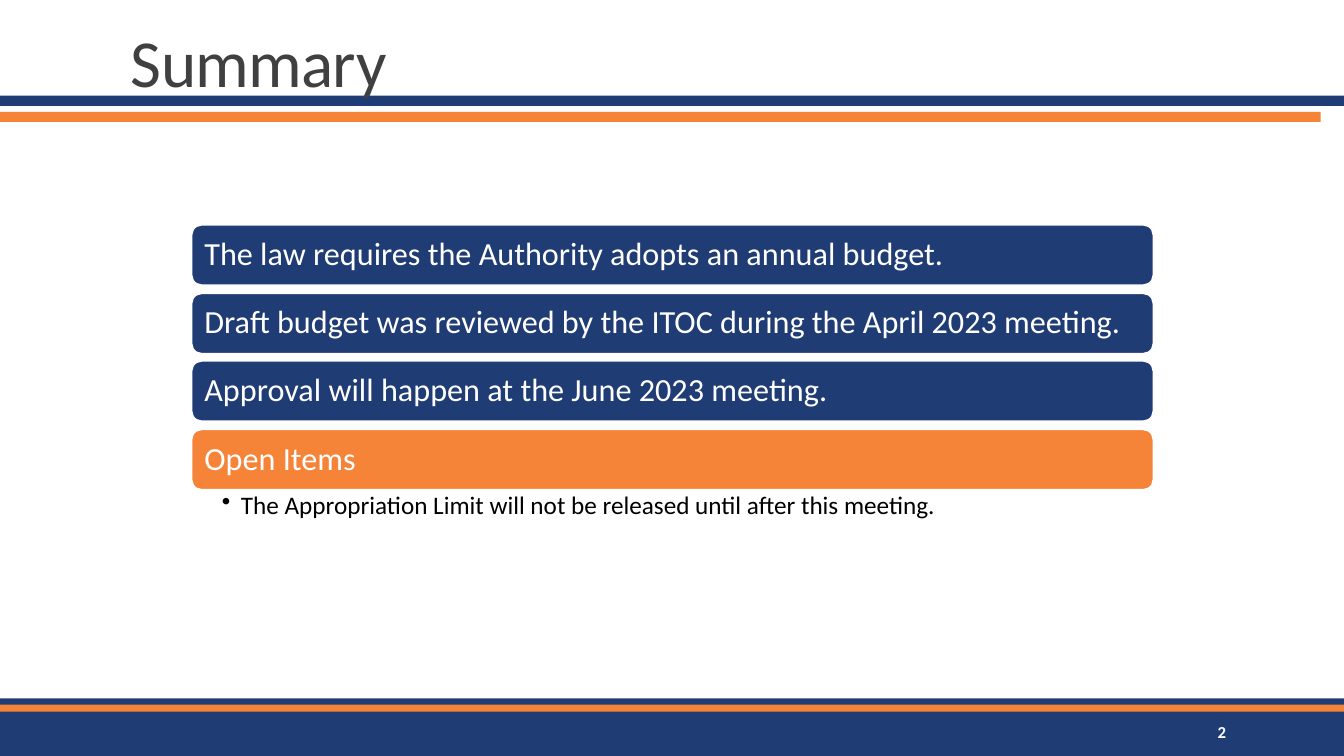
from lxml.etree import SubElement
from pptx import Presentation
from pptx.dml.color import RGBColor
from pptx.enum.shapes import MSO_SHAPE
from pptx.enum.text import MSO_ANCHOR, PP_ALIGN
from pptx.oxml.ns import qn
from pptx.util import Pt

PX = 9144
WIDE, HIGH = 1333, 750
NAVY = RGBColor(0x1F, 0x3C, 0x75)
ORANGE = RGBColor(0xF5, 0x84, 0x39)
GRAY = RGBColor(0x40, 0x40, 0x40)
WHITE = RGBColor(0xFF, 0xFF, 0xFF)
BLACK = RGBColor(0, 0, 0)

POINTS = [
    ("The law requires the Authority adopts an annual budget.", NAVY),
    ("Draft budget was reviewed by the ITOC during the April 2023 meeting.", NAVY),
    ("Approval will happen at the June 2023 meeting.", NAVY),
    ("Open Items", ORANGE),
]
NOTE = "The Appropriation Limit will not be released until after this meeting."


def scale(*box):
    """Turn px lengths into EMU."""
    return [side * PX for side in box]


def add_bar(slide, box, fill, kind=MSO_SHAPE.RECTANGLE):
    """Add a filled shape without line or shadow."""
    bar = slide.shapes.add_shape(kind, *scale(*box))
    bar.shadow.inherit = False
    bar.fill.solid()
    bar.fill.fore_color.rgb = fill
    bar.line.fill.background()
    return bar


def add_box(slide, box):
    """Add an empty text box."""
    return slide.shapes.add_textbox(*scale(*box))


def set_text(shape, text, size, color, anchor, inset=(10, 5, 10, 5), spacing=1.0):
    """Write one paragraph into a shape and return it."""
    frame = shape.text_frame
    frame.word_wrap = True
    frame.vertical_anchor = anchor
    (frame.margin_left, frame.margin_top,
     frame.margin_right, frame.margin_bottom) = scale(*inset)
    para = frame.paragraphs[0]
    para.text = text
    para.alignment = PP_ALIGN.LEFT
    para.line_spacing = spacing
    para.font.name = "Calibri"
    para.font.size = Pt(size)
    para.font.color.rgb = color
    return para


def add_head(slide, left, top, width, height):
    """Draw the two bars and the title that rests on them."""
    base = top + height
    add_bar(slide, (left, base + 6, width - 23, 10), ORANGE)
    add_bar(slide, (left, base - 10, width, 10), NAVY)
    title = add_box(slide, (left + 120, top + 17, 1100, height - 17))
    para = set_text(title, "Summary", 48, GRAY, MSO_ANCHOR.BOTTOM, spacing=0.85)
    para.runs[0].font._element.set("spc", "-50")


def add_foot(slide, left, top, width, height):
    """Draw the footer bands and the slide number."""
    add_bar(slide, (left, top + 7, width, height - 7), NAVY)
    add_bar(slide, (left, top, width, 7), NAVY)
    add_bar(slide, (left, top + 6, width, 7), ORANGE)
    label = add_box(slide, (left + 1083, top + 13, 143, 40))
    para = set_text(label, "2", 12, WHITE, MSO_ANCHOR.MIDDLE)
    para.alignment = PP_ALIGN.RIGHT
    para.font.bold = True


def add_list(slide, left, top, width, height):
    """Stack the points at equal steps with the bulleted note below."""
    tall, note_tall = 60, 42
    step = (height - note_tall - tall) / (len(POINTS) - 1)
    for row, (text, fill) in enumerate(POINTS):
        box = (left, top + round(row * step), width, tall)
        card = add_bar(slide, box, fill, MSO_SHAPE.ROUNDED_RECTANGLE)
        card.line.color.rgb = WHITE
        card.line.width = Pt(1.25)
        set_text(card, text, 23, WHITE, MSO_ANCHOR.MIDDLE, (10, 10, 10, 10), 0.9)
    note = add_box(slide, (left, top + height - note_tall, width, note_tall))
    para = set_text(note, NOTE, 18, BLACK, MSO_ANCHOR.TOP, (30, 3, 18, 3), 0.9)
    add_bullet(para, 19)


def add_bullet(para, indent):
    """Give a paragraph a round bullet with a hanging indent."""
    props = para._p.get_or_add_pPr()
    props.set("marL", str(indent * PX))
    props.set("indent", str(-indent * PX))
    mark = SubElement(props, qn("a:buChar"))
    mark.set("char", "•")
    props.find(qn("a:defRPr")).addprevious(mark)


def main():
    """Build and save the slide."""
    deck = Presentation()
    deck.slide_width, deck.slide_height = scale(WIDE, HIGH)
    slide = deck.slides.add_slide(deck.slide_layouts[6])
    add_foot(slide, 0, 693, WIDE, 57)
    add_head(slide, 0, 0, WIDE, 105)
    add_list(slide, 190, 223, 954, 305)
    deck.save("out.pptx")


if __name__ == "__main__":
    main()
